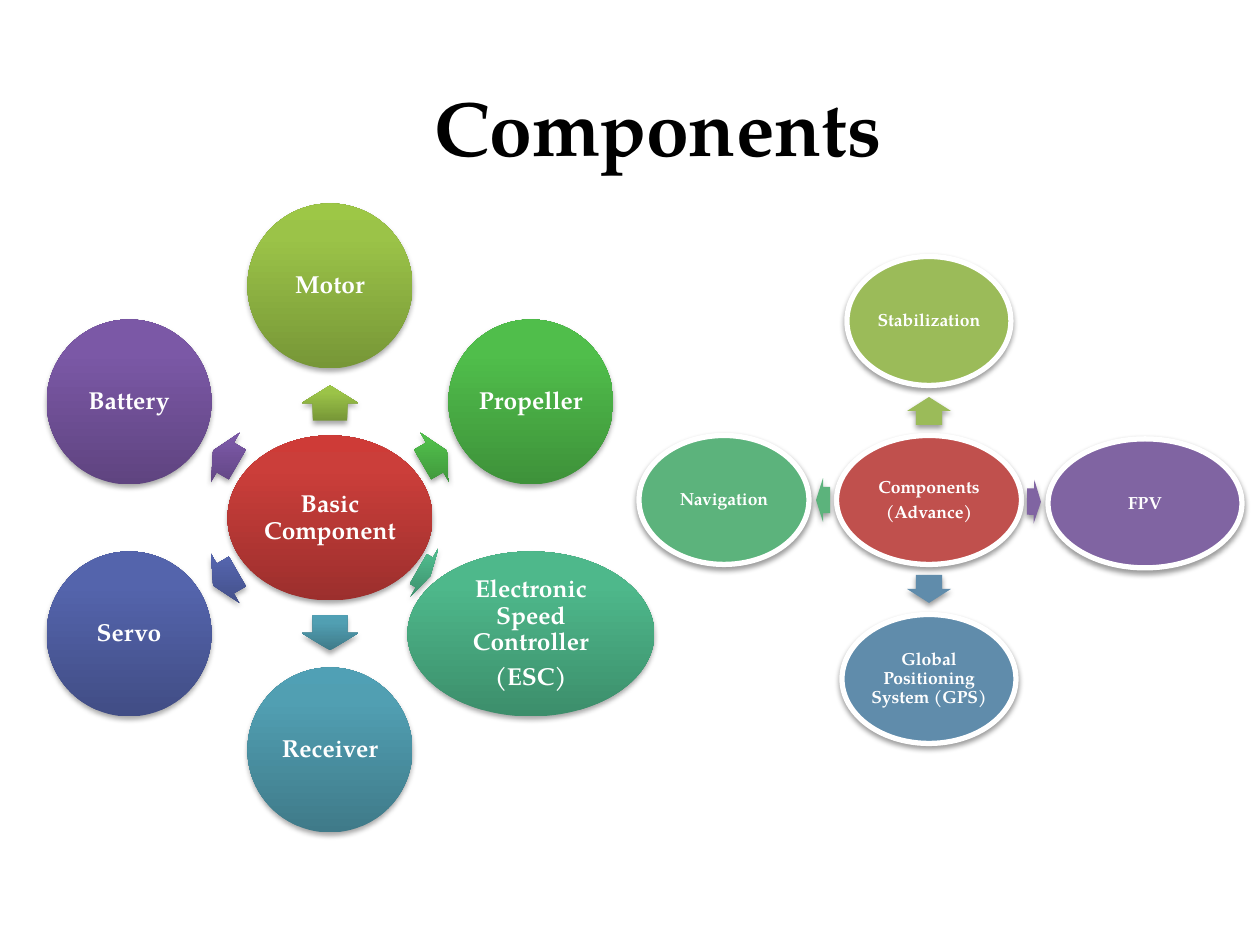
from math import cos, radians, sin

from lxml.etree import SubElement
from pptx import Presentation
from pptx.dml.color import RGBColor
from pptx.enum.shapes import MSO_SHAPE
from pptx.enum.text import MSO_ANCHOR, PP_ALIGN
from pptx.oxml.ns import qn
from pptx.util import Emu, Pt

PX_PER_INCH = 126
WHITE = "FFFFFF"


def px(length):
    return Emu(round(length * 914400 / PX_PER_INCH))


def rgb(hex_color):
    return RGBColor.from_string(hex_color)


class RadialSlide:
    font_name = "TeX Gyre Pagella"

    def __init__(self, slide):
        self.slide = slide

    def style_paragraph(self, paragraph, size, color):
        paragraph.alignment = PP_ALIGN.CENTER
        font = paragraph.font
        font.name, font.size, font.bold = self.font_name, Pt(size), True
        font.color.rgb = rgb(color)

    def title(self, text, left, top, width, height):
        title = self.slide.shapes.title
        title.left, title.top = px(left), px(top)
        title.width, title.height = px(width), px(height)
        title.text_frame.text = text
        title.text_frame.vertical_anchor = MSO_ANCHOR.MIDDLE
        self.style_paragraph(title.text_frame.paragraphs[0], 44, "000000")

    def shape(self, preset, center, width, height, colors):
        """Add a centred shape; one colour fills flat, three run from bottom to top."""
        x, y = center
        shape = self.slide.shapes.add_shape(
            preset, px(x - width / 2), px(y - height / 2), px(width), px(height))
        shape.line.fill.background()
        if len(colors) == 1:
            shape.fill.solid()
            shape.fill.fore_color.rgb = rgb(colors[0])
        else:
            self.gradient(shape, colors)
        self.shadow(shape, 35 if len(colors) > 1 else 38)
        return shape

    def gradient(self, shape, colors):
        shape.fill.gradient()
        shape.fill.gradient_angle = 90
        grad_fill = shape._element.spPr.find(qn("a:gradFill"))
        grad_fill.set("rotWithShape", "0")
        stops = grad_fill.find(qn("a:gsLst"))
        for stop in list(stops):
            stops.remove(stop)
        for position, color in zip((0, 80, 100), colors):
            stop = SubElement(stops, qn("a:gs"), pos=str(position * 1000))
            SubElement(stop, qn("a:srgbClr"), val=color)

    def shadow(self, shape, opacity):
        shape.shadow.inherit = False
        effects = shape._element.spPr.find(qn("a:effectLst"))
        outer = SubElement(effects, qn("a:outerShdw"), blurRad=str(Pt(3.1)),
                           dist=str(Pt(1.8)), dir="5400000", rotWithShape="0")
        black = SubElement(outer, qn("a:srgbClr"), val="000000")
        SubElement(black, qn("a:alpha"), val=str(opacity * 1000))

    def bubble(self, text, center, width, height, colors, size, outlined):
        bubble = self.shape(MSO_SHAPE.OVAL, center, width, height, colors)
        if outlined:
            bubble.line.color.rgb = rgb(WHITE)
            bubble.line.width = Pt(3)
        frame = bubble.text_frame
        frame.word_wrap = True
        frame.vertical_anchor = MSO_ANCHOR.MIDDLE
        frame.margin_left = frame.margin_right = px(2)
        frame.margin_top = frame.margin_bottom = px(2)
        frame.text = text
        for paragraph in frame.paragraphs:
            paragraph.line_spacing = 0.9
            paragraph.space_after = Pt(size * 0.35)
            self.style_paragraph(paragraph, size, WHITE)

    def arrow(self, center, length, thickness, angle, colors):
        arrow = self.shape(MSO_SHAPE.RIGHT_ARROW, center, length, thickness, colors)
        arrow.adjustments[0], arrow.adjustments[1] = 0.6, 0.5
        arrow.rotation = angle % 360

    def cluster(self, hub, center, height, size, thickness, spokes, outlined=False):
        """Draw a hub and, around it, one arrow and one bubble per spoke."""
        def around(distance, angle):
            return (center[0] + distance * cos(radians(angle)),
                    center[1] + distance * sin(radians(angle)))

        hub_text, hub_width, hub_colors = hub
        self.bubble(hub_text, center, hub_width, height, hub_colors, size, outlined)
        for text, angle, reach, width, arrow_reach, arrow_length, colors in spokes:
            self.arrow(around(arrow_reach, angle), arrow_length, thickness, angle, colors)
            self.bubble(text, around(reach, angle), width, height, colors, size, outlined)


# label, angle, distance, width, arrow distance, arrow length, colours
BASIC_PARTS = [
    ("Motor", -90, 232, 165, 115, 35, ("779737", "9BC348", "9DC746")),
    ("Propeller", -30, 232, 165, 121, 28, ("3E923A", "50BE4B", "4FC149")),
    ("Electronic Speed Controller\n(ESC)", 30, 232, 247, 109, 14,
     ("3C8E6B", "4EB88B", "4CBB8C")),
    ("Receiver", 90, 232, 165, 115, 35, ("3F7A89", "519FB2", "50A0B5")),
    ("Servo", 150, 232, 165, 121, 28, ("414D85", "5464AC", "5363AF")),
    ("Battery", 210, 232, 165, 121, 28, ("5F4480", "7B58A6", "7C57A8")),
]
ADVANCED_PARTS = [
    ("Stabilization", -90, 179, 164, 89, 28, ("9BBB59",)),
    ("Navigation", 180, 205, 170, 106, 14, ("5CB37C",)),
    ("Global Positioning System (GPS)", 90, 179, 174, 89, 28, ("608CAB",)),
    ("FPV", 0.9, 216, 194, 105, 14, ("8064A2",)),
]


def main():
    presentation = Presentation()
    presentation.slide_width, presentation.slide_height = px(1260), px(945)
    components = RadialSlide(presentation.slides.add_slide(presentation.slide_layouts[5]))
    components.title("Components", 91, 47, 1134, 158)
    components.cluster(("Basic Component", 205, ("9C2F2D", "CB3E3A", "CE3B37")),
                       (330, 518), 165, 14, 57, BASIC_PARTS)
    components.cluster(("Components\n(Advance)", 185, ("C0504D",)),
                       (929, 500), 129, 10, 44, ADVANCED_PARTS, outlined=True)
    presentation.save("out.pptx")


if __name__ == "__main__":
    main()
